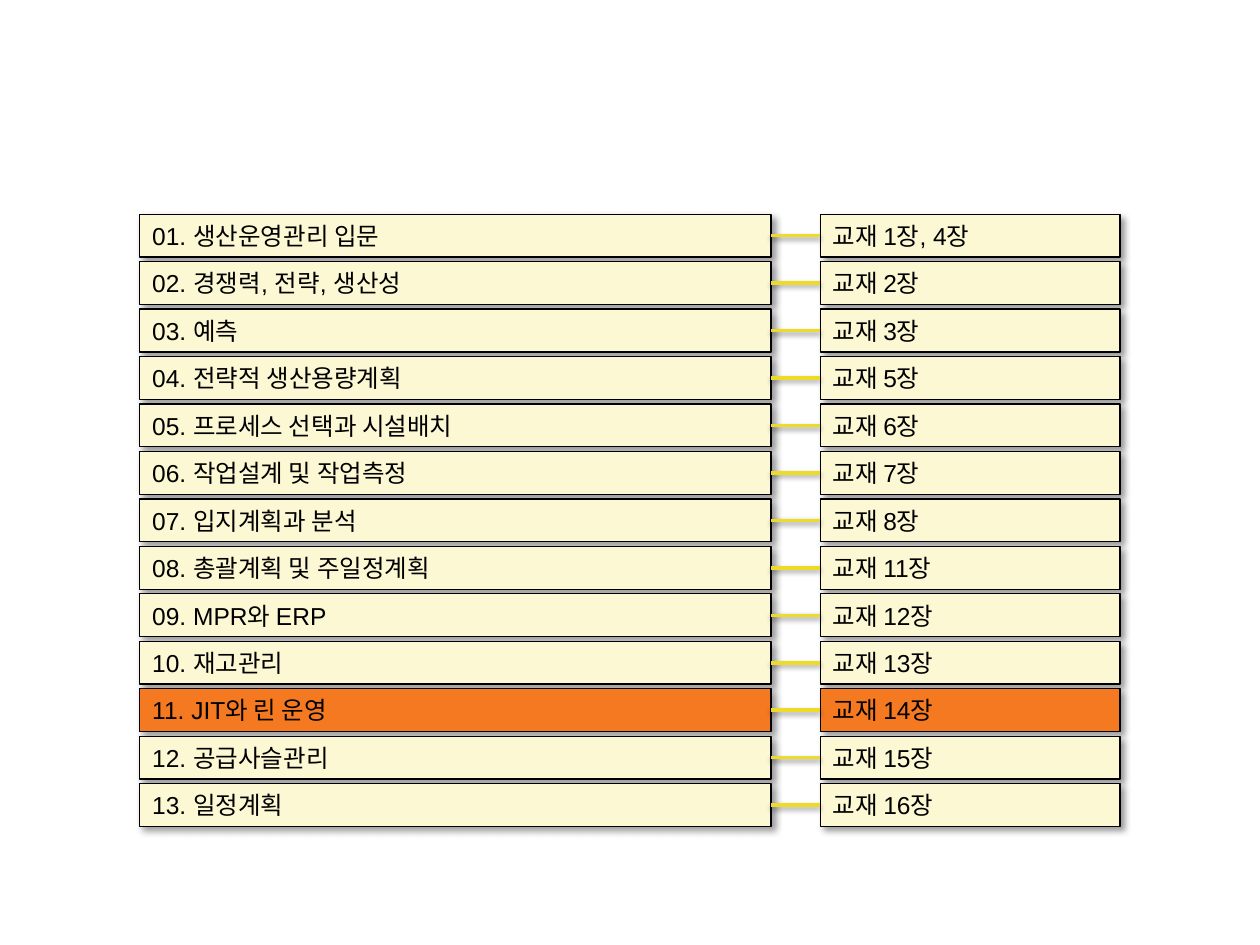
from lxml import etree
from pptx import Presentation
from pptx.dml.color import RGBColor
from pptx.enum.shapes import MSO_CONNECTOR, MSO_SHAPE
from pptx.enum.text import MSO_ANCHOR, MSO_AUTO_SIZE, PP_ALIGN
from pptx.oxml.ns import qn
from pptx.util import Inches, Pt

RECT = MSO_SHAPE.RECTANGLE
STRAIGHT = MSO_CONNECTOR.STRAIGHT
LEFT = PP_ALIGN.LEFT
MIDDLE = MSO_ANCHOR.MIDDLE
GROW = MSO_AUTO_SIZE.SHAPE_TO_FIT_TEXT

COLORS = {"cream": "FCF8D4", "orange": "F47921", "yellow": "EEDB28", "black": "000000"}

# Grid in inches: (left, width) of each column, then the row rhythm
TOPIC_COL = (1.11, 5.01)
BOOK_COL = (6.51, 2.38)
TOP, PITCH, HEIGHT = 1.7, 4.52 / 12, 0.34

CURRENT = 10  # row of the topic in focus
ROWS = [
    ("01. 생산운영관리 입문", "교재 1장, 4장"),
    ("02. 경쟁력, 전략, 생산성", "교재 2장"),
    ("03. 예측", "교재 3장"),
    ("04. 전략적 생산용량계획", "교재 5장"),
    ("05. 프로세스 선택과 시설배치", "교재 6장"),
    ("06. 작업설계 및 작업측정", "교재 7장"),
    ("07. 입지계획과 분석", "교재 8장"),
    ("08. 총괄계획 및 주일정계획", "교재 11장"),
    ("09. MPR와 ERP", "교재 12장"),
    ("10. 재고관리", "교재 13장"),
    ("11. JIT와 린 운영", "교재 14장"),
    ("12. 공급사슬관리", "교재 15장"),
    ("13. 일정계획", "교재 16장"),
]


def color(name):
    return RGBColor.from_string(COLORS[name])


def add_shadow(shape, alpha, blur, dist, angle):
    """Cast a black outer shadow: percent, points, points, degrees."""
    effects = etree.SubElement(shape._element.spPr, qn("a:effectLst"))
    outer = etree.SubElement(
        effects, qn("a:outerShdw"), blurRad=str(Pt(blur)), dist=str(Pt(dist)),
        dir=str(angle * 60000), algn="tl", rotWithShape="0")
    tint = etree.SubElement(outer, qn("a:srgbClr"), val=COLORS["black"])
    etree.SubElement(tint, qn("a:alpha"), val=str(alpha * 1000))


def add_box(slide, col, row, text):
    left, width = col
    box = slide.shapes.add_shape(
        RECT, Inches(left), Inches(TOP + row * PITCH), Inches(width), Inches(HEIGHT))
    box.fill.solid()
    box.fill.fore_color.rgb = color("orange" if row == CURRENT else "cream")
    box.line.color.rgb = color("black")
    box.line.width = Pt(0.75)
    add_shadow(box, 40, 4, 3, 45)

    frame = box.text_frame
    frame.text = text
    frame.word_wrap = True
    frame.auto_size = GROW
    frame.vertical_anchor = MIDDLE
    para = frame.paragraphs[0]
    para.alignment = LEFT
    font = para.runs[0].font
    font.name = "Arial"
    font.size = Pt(14)
    font.color.rgb = color("black")
    return box


def add_link(slide, topic, book):
    link = slide.shapes.add_connector(STRAIGHT, 0, 0, 0, 0)
    link.begin_connect(topic, 3)
    link.end_connect(book, 1)
    link.line.color.rgb = color("yellow")
    link.line.width = Pt(2)
    add_shadow(link, 38, 3.1, 1.6, 90)


def main():
    prs = Presentation()
    prs.slide_width, prs.slide_height = Inches(10), Inches(7.5)
    slide = prs.slides.add_slide(prs.slide_layouts[6])
    topics = [add_box(slide, TOPIC_COL, i, topic) for i, (topic, _) in enumerate(ROWS)]
    books = [add_box(slide, BOOK_COL, i, book) for i, (_, book) in enumerate(ROWS)]
    for topic, book in zip(topics, books):
        add_link(slide, topic, book)
    prs.save("out.pptx")


if __name__ == "__main__":
    main()
